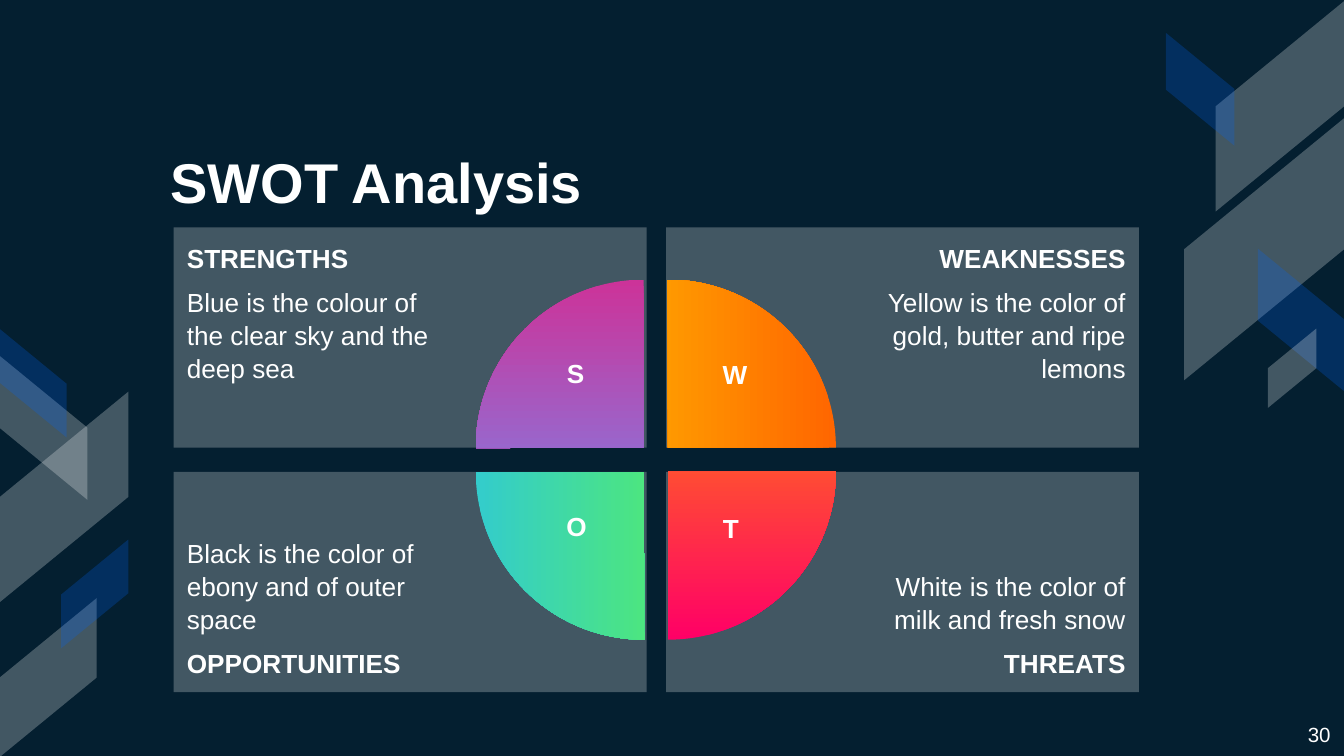
"""Build a SWOT analysis slide with four panels around a split pie."""
import lxml.etree
import pptx
import pptx.dml.color
import pptx.enum.shapes
import pptx.enum.text
import pptx.oxml.ns
import pptx.util

Pt = pptx.util.Pt
Shape = pptx.enum.shapes.MSO_SHAPE
Align = pptx.enum.text.PP_ALIGN
Anchor = pptx.enum.text.MSO_ANCHOR

THEME = {
    "font": "Arial", "back": "041F30", "white": "FFFFFF", "blue": "0066FF",
    "alpha": {"white": 25, "blue": 23},
    "title": 30, "body": 14, "page": 11, "lead": 1.05,
}
TITLE = "SWOT Analysis"
PAGE = "30"
PANELS = [
    {"head": "STRENGTHS", "body": "Blue is the colour of the clear sky and the deep sea",
     "col": 0, "row": 0, "turn": 0, "stops": ("CC3399", "6699FF"),
     "mark": "S", "spot": (296.6, 187.2, 20.2, 31.7)},
    {"head": "WEAKNESSES", "body": "Yellow is the color of gold, butter and ripe lemons",
     "col": 1, "row": 0, "turn": 90, "stops": ("FF6600", "FFCC00"),
     "mark": "W", "spot": (372.2, 187.9, 43.2, 31)},
    {"head": "THREATS", "body": "White is the color of milk and fresh snow",
     "col": 1, "row": 1, "turn": 180, "stops": ("FF0066", "FF9900"),
     "mark": "T", "spot": (380.2, 270, 22.3, 31)},
    {"head": "OPPORTUNITIES", "body": "Black is the color of ebony and of outer space",
     "col": 0, "row": 1, "turn": 270, "stops": ("33CCCC", "66FF33"),
     "mark": "O", "spot": (293.8, 269.3, 30.2, 31.7)},
]
BANDS = [
    ((629.3, 22.3, 113, 69.1), 90, True, "white"),
    ((607, 90.7, 140.4, 85.7), 90, True, "white"),
    ((658.8, 148.3, 76.3, 46.1), 270, False, "blue"),
    ((612.7, 29.5, 60.5, 36.7), 270, False, "blue"),
    ((671, 184.3, 42.5, 25.9), 270, True, "white"),
    ((-22.3, 231.8, 113, 69.1), 90, True, "white"),
    ((-15.1, 205.9, 77, 46.8), 90, False, "white"),
    ((-16.6, 337, 85, 51.8), 270, True, "white"),
    ((-11.5, 187.2, 58.3, 36), 270, False, "blue"),
    ((21.6, 300.2, 58.3, 36), 270, True, "blue"),
]
GRID = {"left": 93, "top": 121.8, "wide": 253.4, "high": 118, "dx": 263.8, "dy": 131}
PIE = {"left": 254.9, "top": 149.8, "size": 180, "gap": 12.9}
INSET, DEEP, SLANT = 7.2, 108, 0.819


def rgb(code):
    return pptx.dml.color.RGBColor.from_string(code)


def put_text(shape, lines, size=THEME["body"], align=Align.LEFT, anchor=Anchor.TOP,
             inset=(INSET,) * 4, lead=THEME["lead"]):
    """Write lines of (text, bold, before, after) into a shape."""
    frame = shape.text_frame
    frame.word_wrap = True
    frame.auto_size = pptx.enum.text.MSO_AUTO_SIZE.NONE
    frame.vertical_anchor = anchor
    (frame.margin_left, frame.margin_top,
     frame.margin_right, frame.margin_bottom) = map(Pt, inset)
    for index, (text, bold, before, after) in enumerate(lines):
        para = frame.add_paragraph() if index else frame.paragraphs[0]
        para.alignment, para.line_spacing = align, lead
        para.space_before, para.space_after = Pt(before), Pt(after)
        run = para.add_run()
        run.text = text
        run.font.name, run.font.size, run.font.bold = THEME["font"], Pt(size), bold
        run.font.color.rgb = rgb(THEME["white"])


def add_box(slide, box, text, **style):
    put_text(slide.shapes.add_textbox(*map(Pt, box)), [text], **style)


def add_form(slide, kind, box, turn=0):
    shape = slide.shapes.add_shape(kind, *map(Pt, box))
    shape.shadow.inherit = False
    shape.line.fill.background()
    shape.rotation = turn
    return shape


def tint(shape, name):
    shape.fill.solid()
    shape.fill.fore_color.rgb = rgb(THEME[name])
    color = shape._element.spPr.find(".//" + pptx.oxml.ns.qn("a:srgbClr"))
    lxml.etree.SubElement(color, pptx.oxml.ns.qn("a:alpha"),
                          val=str(THEME["alpha"][name] * 1000))


def add_band(slide, box, turn, flip, name):
    band = add_form(slide, Shape.PARALLELOGRAM, box, turn)
    band.adjustments[0] = SLANT
    if flip:
        band._element.spPr.find(pptx.oxml.ns.qn("a:xfrm")).set("flipH", "1")
    tint(band, name)


def add_panel(slide, item):
    col, row = item["col"], item["row"]
    box = (GRID["left"] + col * GRID["dx"], GRID["top"] + row * GRID["dy"],
           GRID["wide"], GRID["high"])
    panel = add_form(slide, Shape.RECTANGLE, box)
    tint(panel, "white")
    pair = [(item["head"], True), (item["body"], False)]
    if row:
        pair.reverse()
    lines = [(*pair[0], 0, 0), (*pair[1], 6, 6)]
    sides = (DEEP, INSET) if col else (INSET, DEEP)
    put_text(panel, lines, align=Align.RIGHT if col else Align.LEFT,
             anchor=Anchor.BOTTOM if row else Anchor.TOP,
             inset=(sides[0], INSET, sides[1], INSET))


def add_pie(slide, item):
    box = (PIE["left"] + item["col"] * PIE["gap"], PIE["top"] + item["row"] * PIE["gap"],
           PIE["size"], PIE["size"])
    pie = add_form(slide, Shape.PIE, box, item["turn"])
    pie.adjustments[0], pie.adjustments[1] = 107.89, 162
    pie.fill.gradient()
    pie.fill.gradient_angle = 270
    for stop, code, place in zip(pie.fill.gradient_stops, item["stops"], (0, 1)):
        stop.color.rgb, stop.position = rgb(code), place


def main():
    deck = pptx.Presentation()
    deck.slide_width, deck.slide_height = Pt(720), Pt(405)
    slide = deck.slides.add_slide(deck.slide_layouts[5])
    slide.background.fill.solid()
    slide.background.fill.fore_color.rgb = rgb(THEME["back"])
    for band in BANDS:
        add_band(slide, *band)
    title = slide.shapes.title
    title.left, title.top, title.width, title.height = map(Pt, (84.2, 72, 470.2, 50.4))
    put_text(title, [(TITLE, True, 0, 0)], size=THEME["title"], anchor=Anchor.BOTTOM, lead=1)
    add_box(slide, (673.9, 378.7, 46.1, 25.9), (PAGE, False, 0, 0),
            size=THEME["page"], align=Align.RIGHT)
    for item in PANELS:
        add_panel(slide, item)
    for item in PANELS:
        add_pie(slide, item)
        add_box(slide, item["spot"], (item["mark"], True, 0, 0), align=Align.CENTER,
                inset=(INSET, INSET / 2) * 2)
    deck.save("out.pptx")


if __name__ == "__main__":
    main()
